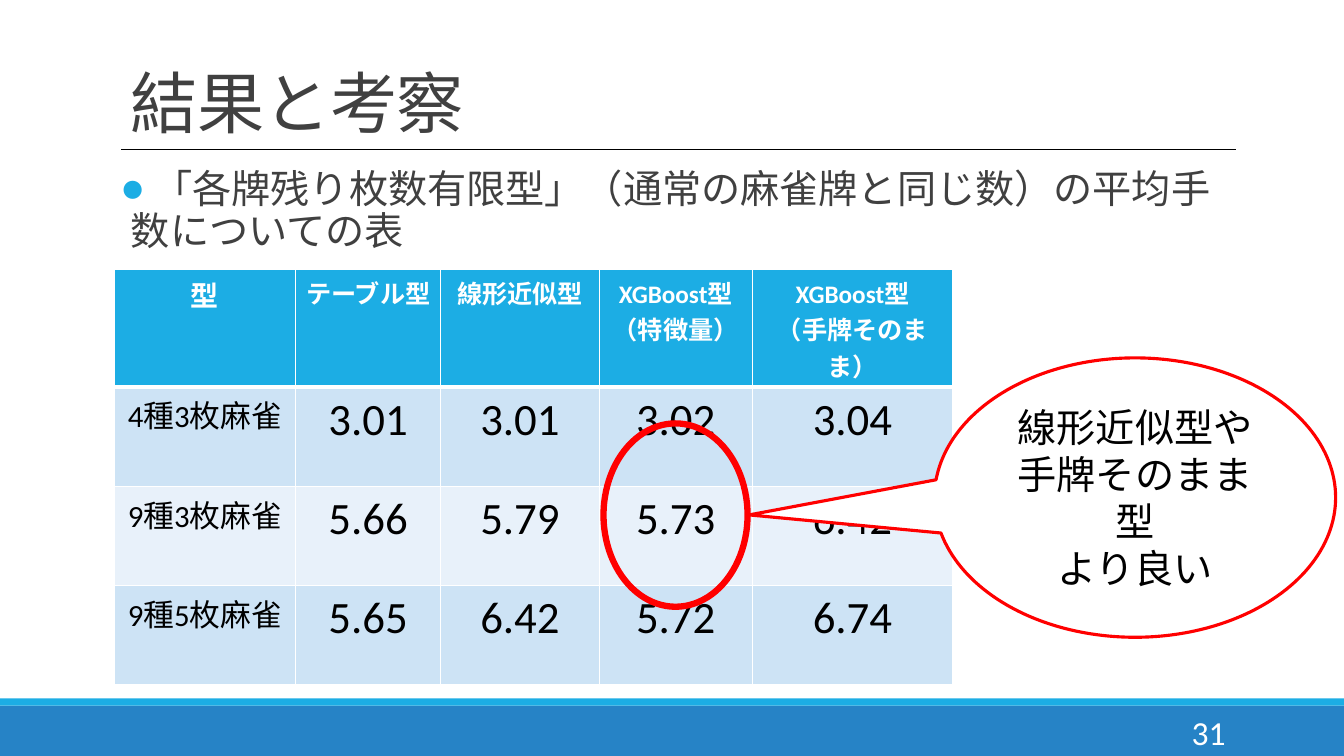
from dataclasses import dataclass

from lxml.etree import SubElement
from pptx import Presentation
from pptx.dml.color import RGBColor
from pptx.enum.shapes import MSO_CONNECTOR, MSO_SHAPE
from pptx.enum.text import MSO_ANCHOR, PP_ALIGN
from pptx.oxml.ns import qn
from pptx.util import Cm, Pt


@dataclass(frozen=True)
class Theme:
    font: str = "Calibri"
    white: str = "FFFFFF"
    black: str = "000000"
    gray: str = "404040"
    accent: str = "1CADE4"
    footer: str = "2683C6"
    mark: str = "FF0000"
    bands: tuple = ("CDE3F5", "E8F1FA")
    title_size: int = 48
    body_size: int = 28
    value_size: int = 32
    label_size: int = 22
    corner_size: int = 20
    header_size: int = 18
    number_size: int = 24


THEME = Theme()

HEADERS = [
    ["型"],
    ["テーブル型"],
    ["線形近似型"],
    ["XGBoost型", "（特徴量）"],
    ["XGBoost型", "（手牌そのまま）"],
]
RESULTS = [
    ("4種3枚麻雀", "3.01", "3.01", "3.02", "3.04"),
    ("9種3枚麻雀", "5.66", "5.79", "5.73", "6.42"),
    ("9種5枚麻雀", "5.65", "6.42", "5.72", "6.74"),
]
COLUMN_WIDTHS = (4.57, 3.66, 3.99, 3.86, 5.05)
ROW_HEIGHTS = (2.98,) + (2.5,) * len(RESULTS)


def rgb(color):
    return RGBColor.from_string(color)


def lengths(box):
    return [Cm(value) for value in box]


def write(frame, lines, size, color, align=PP_ALIGN.LEFT, bold=False):
    frame.word_wrap = True
    for index, line in enumerate(lines):
        paragraph = frame.paragraphs[0] if index == 0 else frame.add_paragraph()
        paragraph.alignment = align
        run = paragraph.add_run()
        run.text = line
        run.font.name = THEME.font
        run.font.size = Pt(size)
        run.font.bold = bold
        run.font.color.rgb = rgb(color)


def add_text(slide, box, text, size, color, anchor, align=PP_ALIGN.LEFT):
    frame = slide.shapes.add_textbox(*lengths(box)).text_frame
    frame.vertical_anchor = anchor
    write(frame, [text], size, color, align)
    return frame


def add_shape(slide, kind, box, fill=None, line=None, width=0):
    shape = slide.shapes.add_shape(kind, *lengths(box))
    shape.shadow.inherit = False
    if fill:
        shape.fill.solid()
        shape.fill.fore_color.rgb = rgb(fill)
    else:
        shape.fill.background()
    if line:
        shape.line.color.rgb = rgb(line)
        shape.line.width = Pt(width)
    else:
        shape.line.fill.background()
    return shape


def add_rule(slide, left, right, top):
    rule = slide.shapes.add_connector(
        MSO_CONNECTOR.STRAIGHT, Cm(left), Cm(top), Cm(right), Cm(top))
    rule.line.color.rgb = rgb(THEME.black)
    rule.line.width = Pt(1)
    SubElement(rule.element.spPr, qn("a:effectLst"))


def add_title(slide, text):
    frame = add_text(slide, (3.05, 1.45, 27.94, 2.26), text,
                     THEME.title_size, THEME.gray, MSO_ANCHOR.BOTTOM)
    paragraph = frame.paragraphs[0]
    paragraph.line_spacing = 0.85
    paragraph.runs[0].font._element.set("spc", "-50")


def add_bullet(slide, text):
    frame = add_text(slide, (3.05, 4.14, 27.48, 13.03), text,
                     THEME.body_size, THEME.gray, MSO_ANCHOR.TOP)
    frame.margin_left = frame.margin_right = 0
    paragraph = frame.paragraphs[0]
    paragraph.line_spacing = 0.9
    paragraph.space_before = Pt(12)
    paragraph.space_after = Pt(2)
    properties = paragraph._p.get_or_add_pPr()
    properties.set("marL", str(Cm(0.25)))
    properties.set("indent", str(Cm(-0.25)))
    bullet_color = SubElement(properties, qn("a:buClr"))
    SubElement(bullet_color, qn("a:srgbClr"), val=THEME.accent)
    SubElement(properties, qn("a:buFont"), typeface=THEME.font)
    SubElement(properties, qn("a:buChar"), char="●")


def style_cell(cell, fill, top=1, bottom=1):
    properties = cell._tc.get_or_add_tcPr()
    for side, width in (("L", 1), ("R", 1), ("T", top), ("B", bottom)):
        border = SubElement(properties, qn(f"a:ln{side}"), w=str(Pt(width)))
        solid = SubElement(border, qn("a:solidFill"))
        SubElement(solid, qn("a:srgbClr"), val=THEME.white)
    cell.fill.solid()
    cell.fill.fore_color.rgb = rgb(fill)


def add_results(slide):
    table = slide.shapes.add_table(
        len(ROW_HEIGHTS), len(COLUMN_WIDTHS), Cm(2.88), Cm(6.78),
        Cm(sum(COLUMN_WIDTHS)), Cm(sum(ROW_HEIGHTS))).table
    for column, width in zip(table.columns, COLUMN_WIDTHS):
        column.width = Cm(width)
    for row, height in zip(table.rows, ROW_HEIGHTS):
        row.height = Cm(height)
    for column, lines in enumerate(HEADERS):
        cell = table.cell(0, column)
        style_cell(cell, THEME.accent, bottom=3)
        size = THEME.header_size if column else THEME.corner_size
        write(cell.text_frame, lines, size, THEME.white, PP_ALIGN.CENTER, True)
    for row, values in enumerate(RESULTS, start=1):
        for column, value in enumerate(values):
            cell = table.cell(row, column)
            style_cell(cell, THEME.bands[(row - 1) % 2], top=3 if row == 1 else 1)
            size = THEME.value_size if column else THEME.label_size
            write(cell.text_frame, [value], size, THEME.black, PP_ALIGN.CENTER)


def add_callout(slide, box, tip, lines):
    callout = add_shape(slide, MSO_SHAPE.OVAL_CALLOUT, box,
                        THEME.white, THEME.mark, 2.25)
    callout.adjustments[0], callout.adjustments[1] = tip
    callout.text_frame.vertical_anchor = MSO_ANCHOR.MIDDLE
    write(callout.text_frame, lines, THEME.body_size, THEME.black, PP_ALIGN.CENTER)


def main():
    presentation = Presentation()
    presentation.slide_width = Cm(33.87)
    presentation.slide_height = Cm(19.05)
    slide = presentation.slides.add_slide(presentation.slide_layouts[6])

    add_shape(slide, MSO_SHAPE.RECTANGLE, (0, 17.78, 33.87, 1.27), THEME.footer)
    add_shape(slide, MSO_SHAPE.RECTANGLE, (0, 17.6, 33.87, 0.18), THEME.accent)
    add_title(slide, "結果と考察")
    add_bullet(slide, " 「各牌残り枚数有限型」（通常の麻雀牌と同じ数）の平均手数についての表")
    add_text(slide, (27.51, 17.93, 3.63, 1.02), "31", THEME.number_size,
             THEME.white, MSO_ANCHOR.MIDDLE, PP_ALIGN.RIGHT)
    add_rule(slide, 3.05, 31.14, 3.76)
    add_results(slide)
    add_shape(slide, MSO_SHAPE.OVAL, (15.21, 10.67, 3.63, 4.62),
              line=THEME.mark, width=4.5)
    add_callout(slide, (23.55, 9.02, 10.11, 7.04), (-0.962, 0.062),
                ["線形近似型や", "手牌そのまま型", "より良い"])

    presentation.save("out.pptx")


if __name__ == "__main__":
    main()
